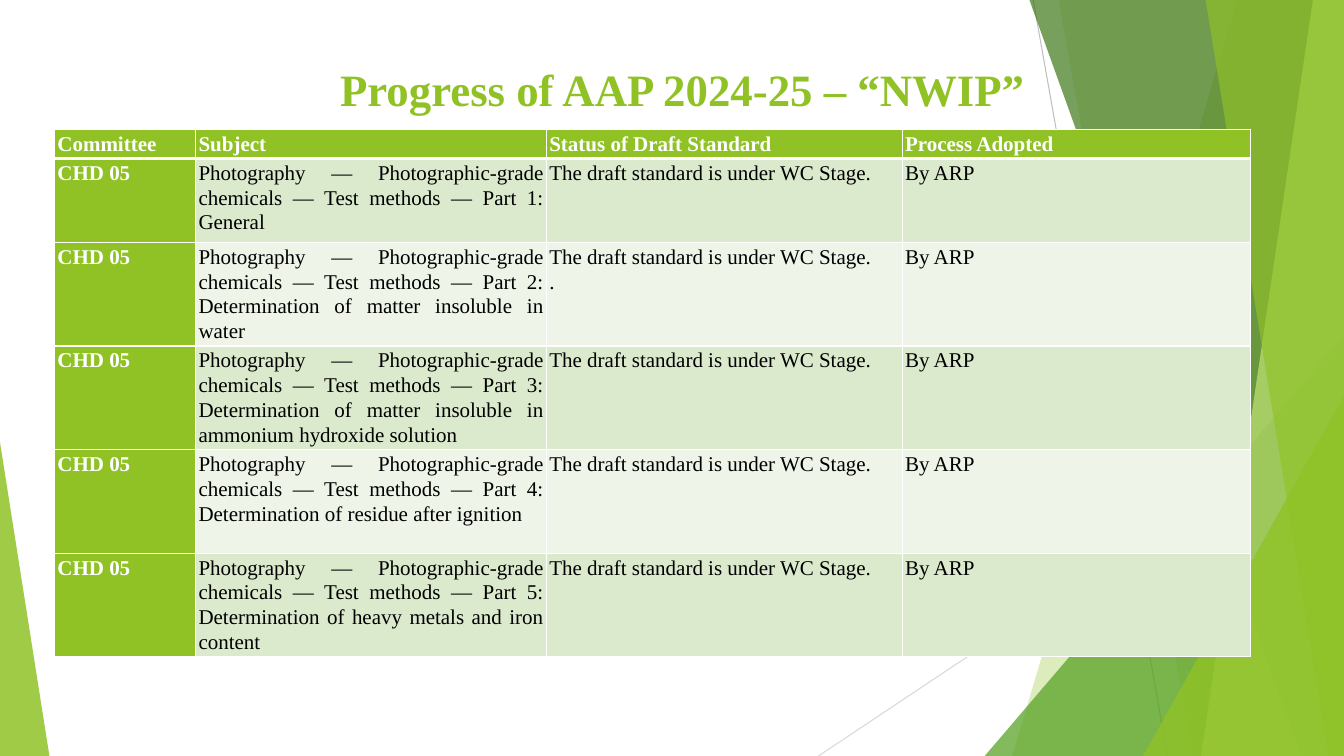
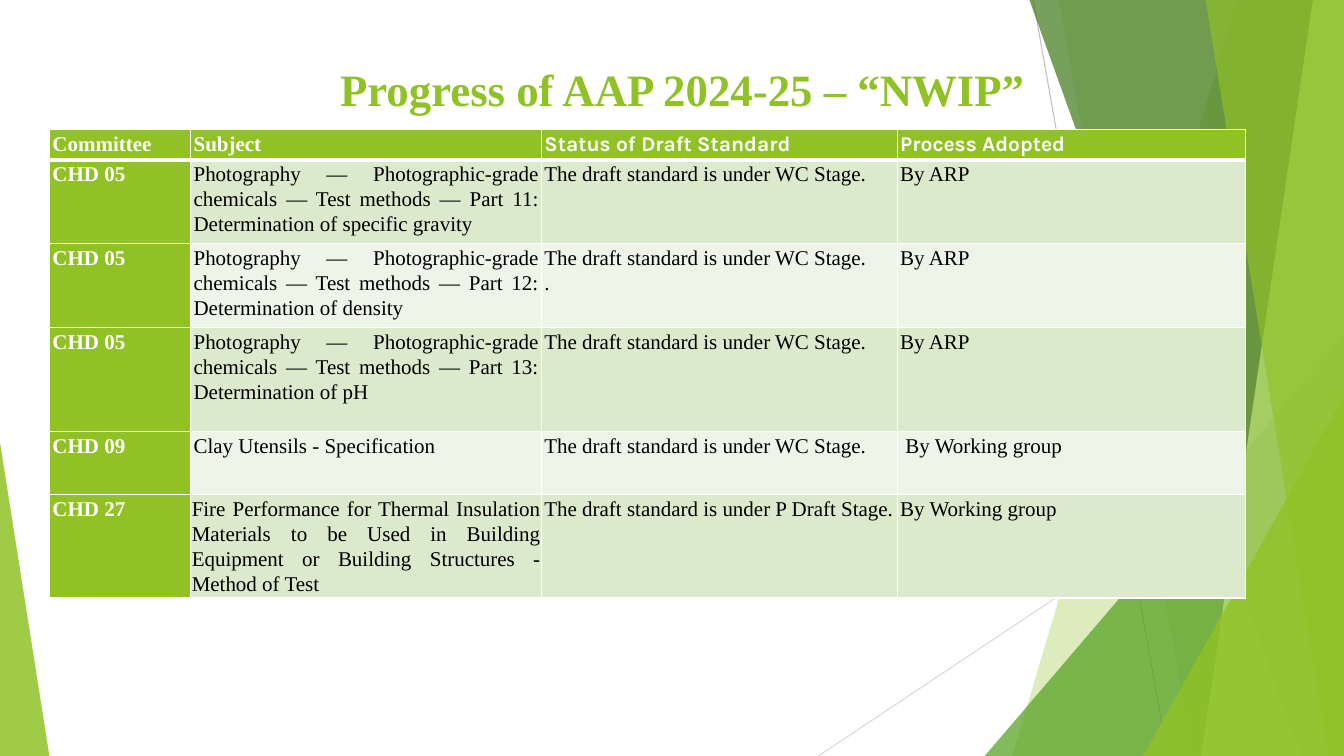
"""Build two progress slides with a faceted green backdrop and status tables."""
from pptx import Presentation
from pptx.dml.color import RGBColor as RGB
from pptx.enum.shapes import MSO_CONNECTOR as LINK, MSO_SHAPE as SHAPE
from pptx.enum.text import MSO_ANCHOR as ANCHOR, MSO_AUTO_SIZE as AUTO, PP_ALIGN as ALIGN
from pptx.oxml.ns import qn
from pptx.util import Pt
from lxml.etree import SubElement as Sub

GREEN = RGB(0x90, 0xC2, 0x26)
LEAF = RGB(0x54, 0xA0, 0x21)
DARK = RGB(0x3F, 0x78, 0x19)
LIME = RGB(0xC0, 0xE4, 0x74)
WHITE = RGB(0xFF, 0xFF, 0xFF)
BLACK = RGB(0, 0, 0)
BANDS = RGB(0xDB, 0xE9, 0xCD), RGB(0xEE, 0xF4, 0xE8)
SILVER = RGB(0xBF, 0xBF, 0xBF)
PALE = RGB(0xD9, 0xD9, 0xD9)
SERIF, SANS = "Times New Roman", "Karla"
WIDE, HIGH = 960, 540

LINES = [(738, 0, 834, HIGH, SILVER), (WIDE, 290, 584.6, HIGH, PALE)]
FACETS = [
    ("band", (884, 723), GREEN, 30),
    ("band", (756, 852), GREEN, 20),
    ("wedge", (703.4, 239.8, 256.6, 1), LEAF, 72),
    ("band", (735, 929.5), DARK, 70),
    ("band", (938, 858), LIME, 70),
    ("band", (861, 949), GREEN, 65),
    ("wedge", (816.5, 283, 143.5, 1), GREEN, 80),
    ("wedge", (0, 316, 35.3, 0), GREEN, 85),
]

TITLE = "Progress of AAP 2024-25 – “NWIP”"
HEADS = ["Committee", "Subject", "Status of Draft Standard", "Process Adopted"]
COLS = [100.8, 250.6, 254.2, 248.4]
PHOTO = "Photography — Photographic-grade chemicals — Test methods — Part "
STAGE = "The draft standard is under WC Stage."
DRAFT = "The draft standard is under P Draft Stage."
ARP, GROUP = "By ARP", "By Working group"
FIRE = ("Fire Performance for Thermal Insulation Materials to be Used in Building "
        "Equipment or Building Structures - Method of Test")
PAGES = [
    {"left": 39, "fonts": [SERIF] * 4, "tall": [21, 60, 74, 74, 74, 74], "rows": [
        ("CHD 05", PHOTO + "1: General", STAGE, ARP),
        ("CHD 05", PHOTO + "2: Determination of matter insoluble in water", STAGE + "\n.", ARP),
        ("CHD 05", PHOTO + "3: Determination of matter insoluble in ammonium hydroxide solution",
         STAGE, ARP),
        ("CHD 05", PHOTO + "4: Determination of residue after ignition", STAGE, ARP),
        ("CHD 05", PHOTO + "5: Determination of heavy metals and iron content", STAGE, ARP)]},
    {"left": 35.5, "fonts": [SERIF, SERIF, SANS, SANS], "tall": [22, 60, 60, 74, 45, 74], "rows": [
        ("CHD 05", PHOTO + "11: Determination of specific gravity", STAGE, ARP),
        ("CHD 05", PHOTO + "12: Determination of density", STAGE + "\n.", ARP),
        ("CHD 05", PHOTO + "13: Determination of pH", STAGE, ARP),
        ("CHD 09", "Clay Utensils - Specification", STAGE, " " + GROUP),
        ("CHD 27", FIRE, DRAFT, GROUP)]},
]


def style(run, font, size, color, bold):
    run.font.name, run.font.size, run.font.bold = font, Pt(size), bold
    run.font.color.rgb = color


def draw_line(shapes, x1, y1, x2, y2, color):
    line = shapes.add_connector(LINK.STRAIGHT, Pt(x1), Pt(y1), Pt(x2), Pt(y2))
    line.line.color.rgb, line.line.width = color, Pt(0.75)
    Sub(line.element.spPr, qn("a:effectLst"))
    return line


def draw_facet(shapes, kind, dims, color, alpha):
    if kind == "band":
        top, foot = dims
        path = shapes.build_freeform(Pt(top), Pt(-1))
        path.add_line_segments([(Pt(WIDE), Pt(-1)), (Pt(WIDE), Pt(HIGH)), (Pt(foot), Pt(HIGH))])
        facet = path.convert_to_shape()
    else:
        x, y, w, tip = dims
        facet = shapes.add_shape(SHAPE.ISOSCELES_TRIANGLE, Pt(x), Pt(y), Pt(w), Pt(HIGH - y))
        facet.adjustments[0] = tip
    facet.shadow.inherit = False
    facet.fill.solid()
    facet.fill.fore_color.rgb = color
    facet.line.fill.background()
    tint = facet.element.spPr.find(qn("a:solidFill"))[0]
    Sub(tint, qn("a:alpha"), val=str(alpha * 1000))
    return facet


def add_backdrop(slide, layout):
    parts = [draw_line(slide.shapes, *spec) for spec in LINES]
    parts += [draw_facet(slide.shapes, *spec) for spec in FACETS]
    for n, part in enumerate(parts):
        part.element.xpath(".//p:cNvPr")[0].set("id", str(100 + n))
        layout.shapes.element.insert(2 + n, part.element)


def set_title(slide):
    title = slide.shapes.title
    title.left, title.top, title.width, title.height = Pt(149), Pt(40.5), Pt(677), Pt(103.5)
    frame = title.text_frame
    frame.auto_size, frame.vertical_anchor = AUTO.NONE, ANCHOR.TOP
    para = frame.paragraphs[0]
    para.alignment = ALIGN.CENTER
    run = para.add_run()
    run.text = TITLE
    style(run, SERIF, 32, GREEN, True)


def fill_cell(cell, text, font, fill, head, strong):
    cell.fill.solid()
    cell.fill.fore_color.rgb = fill
    snug = text == FIRE
    cell.margin_left = cell.margin_right = Pt(0.7 if snug else 2)
    cell.margin_top = cell.margin_bottom = Pt(0.5 if snug else 1.2)
    cell.vertical_anchor = ANCHOR.MIDDLE if snug else ANCHOR.TOP
    frame = cell.text_frame
    for n, part in enumerate(text.split("\n")):
        para = frame.add_paragraph() if n else frame.paragraphs[0]
        para.alignment = ALIGN.LEFT if head else ALIGN.JUSTIFY
        para.line_spacing = 1.07
        run = para.add_run()
        run.text = part
        style(run, font, 15, WHITE if strong else BLACK, strong)


def set_borders(props, row):
    thick = {"lnB": row == 0, "lnT": row == 1}
    for n, side in enumerate(("lnL", "lnR", "lnT", "lnB")):
        width = 3 if thick.get(side) else 1
        edge = Sub(props, qn("a:" + side), w=str(Pt(width)))
        Sub(Sub(edge, qn("a:solidFill")), qn("a:srgbClr"), val=str(WHITE))
        props.insert(n, edge)


def add_grid(slide, page):
    rows = [HEADS, *page["rows"]]
    tall = page["tall"]
    frame = slide.shapes.add_table(len(rows), len(COLS), Pt(page["left"]), Pt(92.2),
                                   Pt(sum(COLS)), Pt(sum(tall)))
    table = frame.table
    table.horz_banding = False
    for col, width in zip(table.columns, COLS):
        col.width = Pt(width)
    for r, texts in enumerate(rows):
        table.rows[r].height = Pt(tall[r])
        for c, text in enumerate(texts):
            head, strong = r == 0, r == 0 or c == 0
            fill = GREEN if strong else BANDS[(r - 1) % 2]
            font = page["fonts"][c] if head else SERIF
            fill_cell(table.cell(r, c), text, font, fill, head, strong)
    for n, props in enumerate(frame.element.xpath(".//a:tcPr")):
        set_borders(props, n // len(COLS))


def main():
    deck = Presentation()
    deck.slide_width, deck.slide_height = Pt(WIDE), Pt(HIGH)
    layout = deck.slide_layouts[5]
    for n, page in enumerate(PAGES):
        slide = deck.slides.add_slide(layout)
        if n == 0:
            add_backdrop(slide, layout)
        set_title(slide)
        add_grid(slide, page)
    deck.save("out.pptx")


if __name__ == "__main__":
    main()
